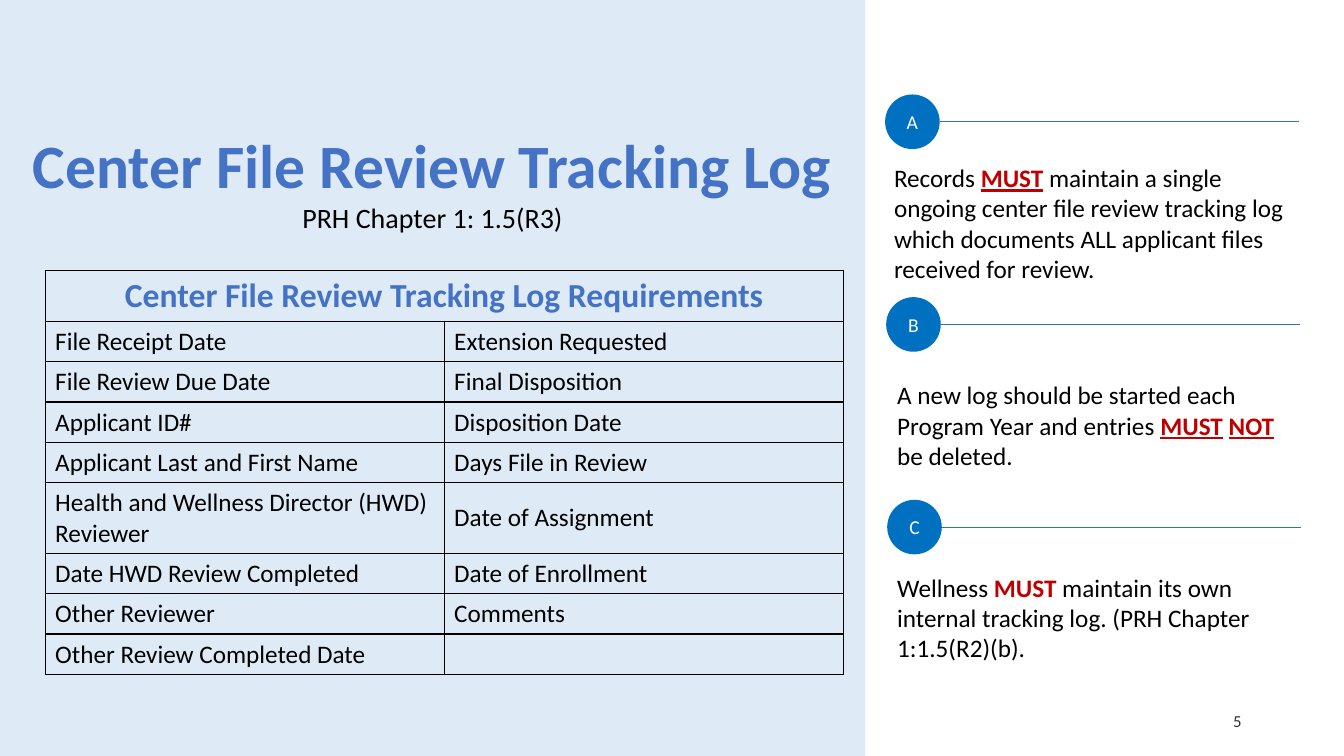
from lxml.etree import SubElement
from pptx import Presentation
from pptx.dml.color import RGBColor
from pptx.enum.shapes import MSO_CONNECTOR, MSO_SHAPE
from pptx.enum.text import MSO_ANCHOR, PP_ALIGN
from pptx.oxml.ns import qn
from pptx.util import Pt

PX = 9525  # EMU in one px, 96 px to the inch
HUES = {
    "panel": "DEEBF7", "title": "4472C4", "text": "000000", "must": "C00000",
    "disc": "0070C0", "rule": "2E75B6", "white": "FFFFFF", "page": "333333",
}
FIELDS = [
    ("File Receipt Date", "Extension Requested"),
    ("File Review Due Date", "Final Disposition"),
    ("Applicant ID#", "Disposition Date"),
    ("Applicant Last and First Name", "Days File in Review"),
    ("Health and Wellness Director (HWD) Reviewer", "Date of Assignment"),
    ("Date HWD Review Completed", "Date of Enrollment"),
    ("Other Reviewer", "Comments"),
    ("Other Review Completed Date", ""),
]
# Letter, offset of the note from its disc (x, y), note height, runs.
# Run styles: "" plain, "b" strong, "bu" strong and underlined.
NOTES = [
    ("A", -1, 60, 126, [
        ("Records ", ""), ("MUST", "bu"),
        (" maintain a single ongoing center file review tracking log "
         "which documents ALL applicant files received for review.", "")]),
    ("B", 1, 74, 97, [
        ("A new log should be started each Program Year and entries ", ""),
        ("MUST", "bu"), (" ", ""), ("NOT", "bu"), (" be deleted.", "")]),
    ("C", 0, 64, 97, [
        ("Wellness ", ""), ("MUST ", "b"),
        ("maintain its own internal tracking log. "
         "(PRH Chapter 1:1.5(R2)(b).", "")]),
]


def hue(name):
    return RGBColor.from_string(HUES[name])


def scale(*nums):
    return [n * PX for n in nums]


def style(para, size, color, bold=False, align=PP_ALIGN.LEFT):
    font = para.font
    font.name, font.size, font.bold = "Calibri", Pt(size), bold
    font.color.rgb = hue(color)
    para.alignment = align


def add_box(slide, x, y, w, h):
    frame = slide.shapes.add_textbox(*scale(x, y, w, h)).text_frame
    frame.word_wrap = True
    return frame


def add_solid(slide, kind, color, x, y, w, h):
    shape = slide.shapes.add_shape(kind, *scale(x, y, w, h))
    shape.shadow.inherit = False
    shape.fill.solid()
    shape.fill.fore_color.rgb = hue(color)
    shape.line.fill.background()
    return shape


def add_rule(slide, x, y, w):
    rule = slide.shapes.add_connector(
        MSO_CONNECTOR.STRAIGHT, *scale(x, y, x + w, y))
    rule.line.color.rgb = hue("rule")
    rule.line.width = Pt(0.5)
    SubElement(rule._element.spPr, qn("a:effectLst"))


def set_cell(cell):
    props = cell._tc.get_or_add_tcPr()
    for side in ("lnL", "lnR", "lnT", "lnB"):
        line = SubElement(props, qn("a:" + side), w=str(Pt(1)))
        fill = SubElement(line, qn("a:solidFill"))
        SubElement(fill, qn("a:srgbClr"), val=HUES["text"])
    cell.fill.background()


def add_log(slide, x, y, w, row):
    count = len(FIELDS) + 1
    table = slide.shapes.add_table(
        count, 2, *scale(x, y, w, row * count)).table
    table.first_row = table.horz_banding = False
    for col in table.columns:
        col.width = w * PX // 2
    for line in table.rows:
        line.height = row * PX
    for cell in table.iter_cells():
        set_cell(cell)

    # Heading across both columns
    head = table.cell(0, 0)
    head.merge(table.cell(0, 1))
    head.text = "Center File Review Tracking Log Requirements"
    style(head.text_frame.paragraphs[0], 24, "title", True, PP_ALIGN.CENTER)

    # Field names
    for r, pair in enumerate(FIELDS, 1):
        for c, text in enumerate(pair):
            cell = table.cell(r, c)
            cell.text = text
            style(cell.text_frame.paragraphs[0], 18, "text")
            if c:
                cell.vertical_anchor = MSO_ANCHOR.MIDDLE


def add_left(slide, x, y, w, h):
    add_solid(slide, MSO_SHAPE.RECTANGLE, "panel", x, y, w, h)

    # Title and chapter
    frame = add_box(slide, x, y + 116, w, 113)
    title = frame.paragraphs[0]
    title.text = "Center File Review Tracking Log"
    style(title, 44, "title", True, PP_ALIGN.CENTER)
    part = frame.add_paragraph()
    part.text = "PRH Chapter 1: 1.5(R3)"
    style(part, 20, "text", align=PP_ALIGN.CENTER)

    add_log(slide, x + 43, y + 258, 760, 31)


def add_note(slide, x, y, w, note):
    mark, dx, dy, high, runs = note
    size = 52

    # Lettered disc and its rule
    add_rule(slide, x + size, y + size // 2, w - size)
    disc = add_solid(slide, MSO_SHAPE.OVAL, "disc", x, y, size, size)
    frame = disc.text_frame
    frame.text = mark
    frame.vertical_anchor = MSO_ANCHOR.MIDDLE
    style(frame.paragraphs[0], 14, "white", align=PP_ALIGN.CENTER)

    # Note text
    para = add_box(slide, x + dx, y + dy, w, high).paragraphs[0]
    style(para, 18, "text")
    for text, look in runs:
        run = para.add_run()
        run.text = text
        if look:
            run.font.bold = True
            run.font.underline = "u" in look
            run.font.color.rgb = hue("must")


def add_right(slide, x, y, w):
    for i, note in enumerate(NOTES):
        add_note(slide, x + i, y + i * 193, w, note)


def add_page(slide, x, y, w, h):
    frame = add_box(slide, x, y, w, h)
    frame.text = "5"
    frame.vertical_anchor = MSO_ANCHOR.MIDDLE
    style(frame.paragraphs[0], 12, "page", align=PP_ALIGN.RIGHT)


def main():
    deck = Presentation()
    deck.slide_width, deck.slide_height = scale(1280, 720)
    slide = deck.slides.add_slide(deck.slide_layouts[6])
    add_left(slide, 0, 0, 824, 720)
    add_right(slide, 843, 90, 394)
    add_page(slide, 904, 667, 288, 38)
    deck.save("out.pptx")


if __name__ == "__main__":
    main()
